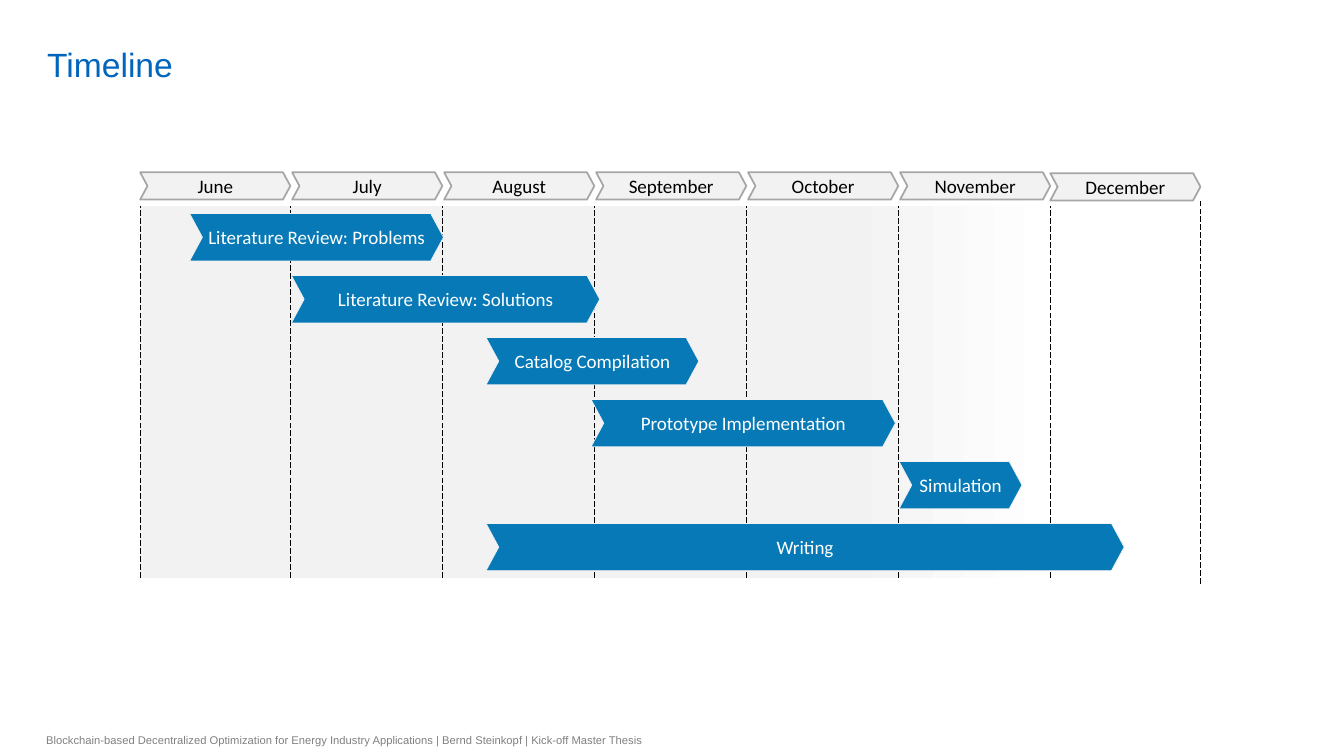
from dataclasses import dataclass

from lxml.etree import SubElement
from pptx import Presentation
from pptx.dml.color import RGBColor
from pptx.enum.dml import MSO_LINE as Dash
from pptx.enum.shapes import MSO_CONNECTOR as Link, MSO_SHAPE as Form
from pptx.enum.text import MSO_ANCHOR as Anchor, PP_ALIGN as Align
from pptx.oxml.ns import qn
from pptx.shapes.autoshape import Shape
from pptx.slide import Slide
from pptx.util import Pt

BLACK = RGBColor(0x00, 0x00, 0x00)
WHITE = RGBColor(0xFF, 0xFF, 0xFF)
PALE = RGBColor(0xF2, 0xF2, 0xF2)
EDGE = RGBColor(0xA6, 0xA6, 0xA6)
GREY = RGBColor(0x80, 0x80, 0x80)
BLUE = RGBColor(0x07, 0x79, 0xB7)
HEAD = RGBColor(0x00, 0x65, 0xBD)

LEFT, TOP, BASE = 100.1, 146.9, 412.6
STEP = 108.56


@dataclass(frozen=True)
class Style:
    height: float
    fill: RGBColor
    edge: RGBColor
    weight: float
    ink: RGBColor


@dataclass(frozen=True)
class Arrow:
    text: str
    left: float
    top: float
    width: float
    style: Style


@dataclass(frozen=True)
class Label:
    text: str
    left: float
    top: float
    width: float
    height: float
    anchor: Anchor
    pad: float
    size: float
    ink: RGBColor


MONTH = Style(19.5, PALE, EDGE, 1.25, BLACK)
TASK = Style(33.8, BLUE, PALE, 0.5, WHITE)

NAMES = ["June", "July", "August", "September", "October", "November"]
MONTHS = [Arrow(name, LEFT + i * STEP, 123.1, 107.3, MONTH) for i, name in enumerate(NAMES)]
MONTHS.append(Arrow("December", 750.2, 123.7, 107.3, MONTH))

SPANS = [
    ("Literature Review: Problems", 135.5, 181.3),
    ("Literature Review: Solutions", 208.2, 220.2),
    ("Catalog Compilation", 347.2, 152),
    ("Prototype Implementation", 422.2, 217.4),
    ("Simulation", 642.2, 87.8),
    ("Writing", 347.2, 455.8),
]
TASKS = [Arrow(text, left, 152.6 + row * 44.26, width, TASK)
         for row, (text, left, width) in enumerate(SPANS)]

LABELS = [
    Label("Timeline", 26.6, 3.6, 833.8, 56.9, Anchor.BOTTOM, 0, 24, HEAD),
    Label("Blockchain-based Decentralized Optimization for Energy Industry Applications"
          " | Bernd Steinkopf | Kick-off Master Thesis",
          25.9, 517, 453.6, 23, Anchor.MIDDLE, 3.6, 8, GREY),
]


def write(shape: Shape, text: str, face: str, size: float, ink: RGBColor,
          align: Align, anchor: Anchor, side: float, pad: float) -> None:
    frame = shape.text_frame
    frame.word_wrap = True
    frame.vertical_anchor = anchor
    frame.margin_left = frame.margin_right = Pt(side)
    frame.margin_top = frame.margin_bottom = Pt(pad)
    para = frame.paragraphs[0]
    para.text = text
    para.alignment = align
    para.font.name = face
    para.font.size = Pt(size)
    para.font.color.rgb = ink


def draw_field(slide: Slide) -> None:
    field = slide.shapes.add_shape(Form.RECTANGLE, Pt(LEFT), Pt(TOP), Pt(759.6), Pt(BASE - TOP))
    field.shadow.inherit = False
    field.line.fill.background()
    field.fill.gradient()
    field.fill.gradient_angle = 180
    for stop, place, tone in zip(field.fill.gradient_stops, (0.14, 0.34), (WHITE, PALE)):
        stop.position = place
        stop.color.rgb = tone


def draw_line(slide: Slide, x: float, low: float = BASE, high: float = TOP) -> None:
    rule = slide.shapes.add_connector(Link.STRAIGHT, Pt(x), Pt(low), Pt(x), Pt(high))
    rule.line.color.rgb = BLACK
    rule.line.width = Pt(0.5)
    rule.line.dash_style = Dash.LONG_DASH
    SubElement(rule._element.spPr, qn("a:effectLst"))


def draw_arrow(slide: Slide, arrow: Arrow) -> None:
    style = arrow.style
    shape = slide.shapes.add_shape(Form.CHEVRON, Pt(arrow.left), Pt(arrow.top),
                                   Pt(arrow.width), Pt(style.height))
    shape.adjustments[0] = 0.27
    shape.shadow.inherit = False
    shape.fill.solid()
    shape.fill.fore_color.rgb = style.fill
    shape.line.color.rgb = style.edge
    shape.line.width = Pt(style.weight)
    write(shape, arrow.text, "Calibri", 13.6, style.ink, Align.CENTER, Anchor.MIDDLE, 0, 0)


def draw_label(slide: Slide, label: Label) -> None:
    box = slide.shapes.add_textbox(Pt(label.left), Pt(label.top), Pt(label.width), Pt(label.height))
    write(box, label.text, "Arial", label.size, label.ink, Align.LEFT, label.anchor, 7.2, label.pad)


def main() -> None:
    deck = Presentation()
    deck.slide_width, deck.slide_height = Pt(960), Pt(540)
    slide = deck.slides.add_slide(deck.slide_layouts[6])
    draw_field(slide)
    draw_line(slide, LEFT)
    for i in range(6):
        draw_line(slide, 207.4 + i * STEP)
    draw_line(slide, 857.5, 416.9, 142.6)
    for arrow in MONTHS + TASKS:
        draw_arrow(slide, arrow)
    for label in LABELS:
        draw_label(slide, label)
    deck.save("out.pptx")


if __name__ == "__main__":
    main()
